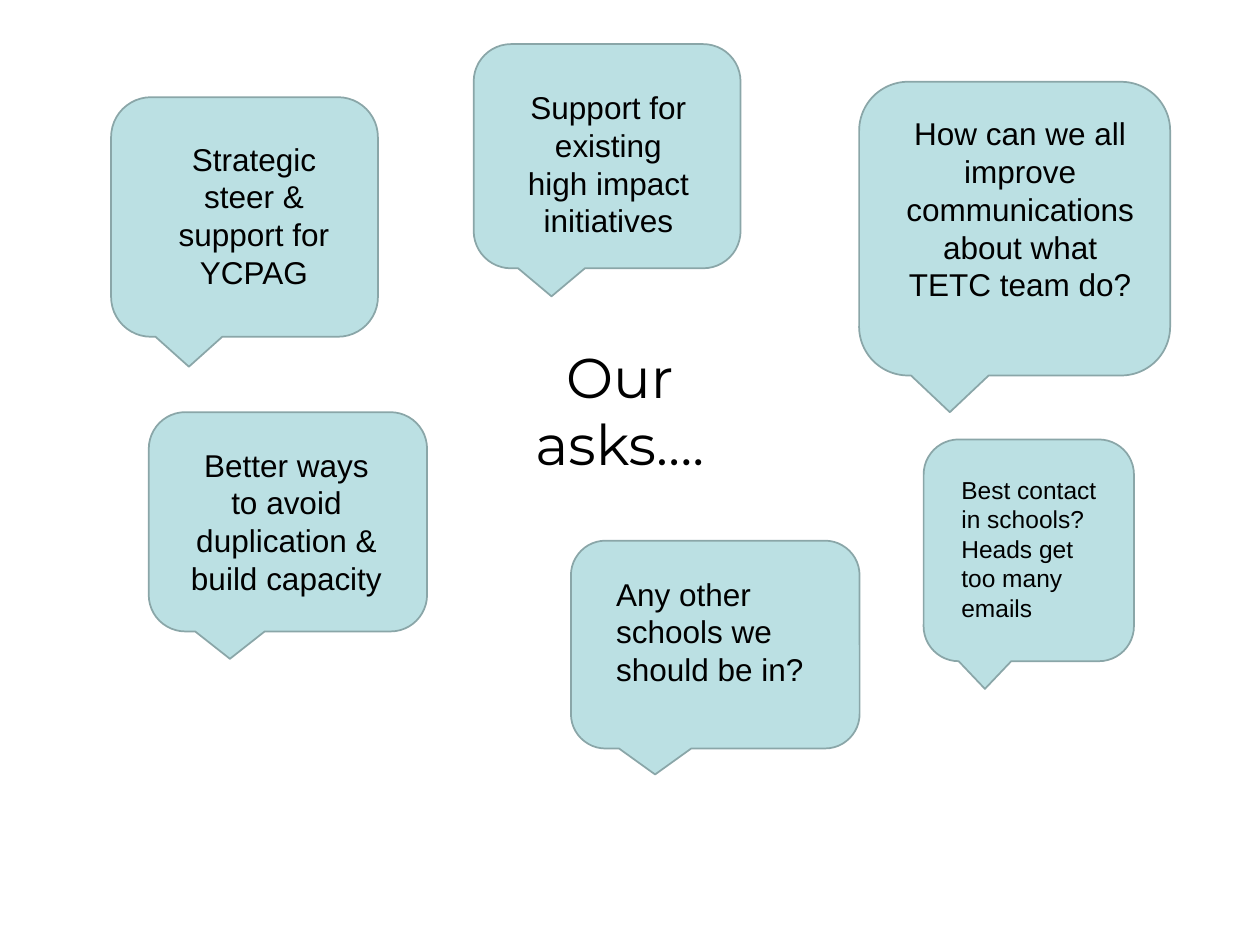
import pptx
import pptx.dml.color
import pptx.enum.shapes
import pptx.enum.text
import pptx.util

Cm, Pt = pptx.util.Cm, pptx.util.Pt
PALE_TEAL = pptx.dml.color.RGBColor(0xBB, 0xE0, 0xE3)
GREY_TEAL = pptx.dml.color.RGBColor(0x8A, 0xA6, 0xA8)
BLACK = pptx.dml.color.RGBColor(0, 0, 0)
CENTER = pptx.enum.text.PP_ALIGN.CENTER
LEFT = pptx.enum.text.PP_ALIGN.LEFT

# callout box, text box (left, top, width, height in cm), wording, size, alignment
ASKS = [
    ((2.24, 1.96, 5.38, 4.83), (3, 2.69, 4.24, 3.33),
     "Strategic steer & support for YCPAG", 18, CENTER),
    ((9.55, 0.89, 5.38, 4.52), (10.36, 1.65, 3.81, 3.33),
     "Support for existing high impact initiatives", 18, CENTER),
    ((17.32, 1.65, 6.27, 5.92), (17.86, 2.18, 5.41, 4.11),
     "How can we all improve communications about what TETC team do?", 18, CENTER),
    ((3, 8.31, 5.61, 4.42), (3.58, 8.86, 4.39, 3.33),
     "Better ways to avoid duplication & build capacity", 18, CENTER),
    ((11.51, 10.9, 5.82, 4.19), (12.17, 11.46, 4.52, 2.57),
     "Any other schools we should be in?", 18, LEFT),
    ((18.62, 8.86, 4.24, 4.47), (19.13, 9.45, 3.23, 3.25),
     "Best contact in schools? Heads get too many emails", 14, LEFT),
]


def write(sp, text, size, font, align):
    tf = sp.text_frame
    tf.word_wrap = True
    tf.auto_size = pptx.enum.text.MSO_AUTO_SIZE.SHAPE_TO_FIT_TEXT
    tf.vertical_anchor = pptx.enum.text.MSO_ANCHOR.TOP
    p = tf.paragraphs[0]
    p.text = text
    p.alignment = align
    p.font.size = Pt(size)
    p.font.name = font
    p.font.color.rgb = BLACK


prs = pptx.Presentation()
prs.slide_width, prs.slide_height = Cm(25.4), Cm(19.05)
s = prs.slides.add_slide(prs.slide_layouts[5])

title = s.shapes.title
title.left, title.top, title.width, title.height = Cm(9.55), Cm(6.78), Cm(5.89), Cm(3)
write(title, "Our asks….", 32, "Montserrat", CENTER)

for callout, box, text, size, align in ASKS:
    sp = s.shapes.add_shape(
        pptx.enum.shapes.MSO_SHAPE.ROUNDED_RECTANGULAR_CALLOUT, *map(Cm, callout))
    sp.shadow.inherit = False
    sp.fill.solid()
    sp.fill.fore_color.rgb = PALE_TEAL
    sp.line.color.rgb = GREY_TEAL
    sp.line.width = Pt(1)
    write(s.shapes.add_textbox(*map(Cm, box)), text, size, "Arial", align)

prs.save("out.pptx")
